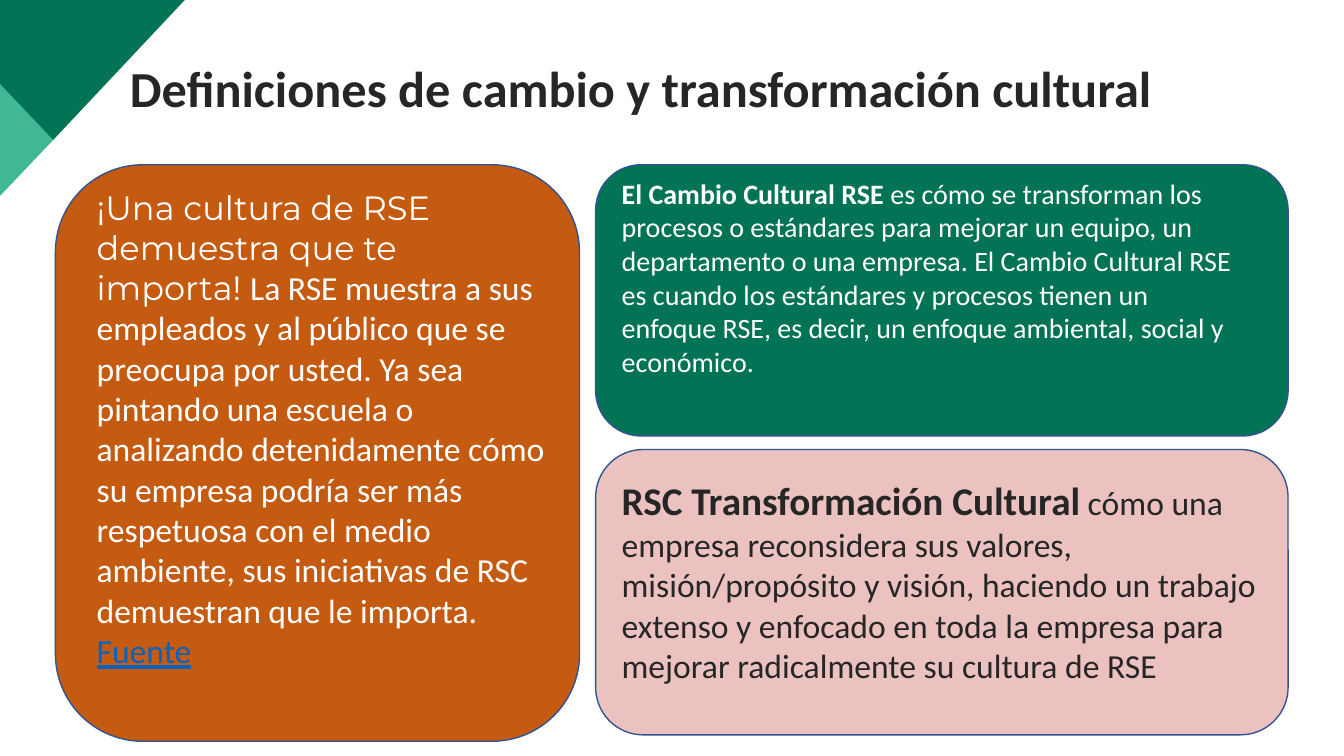
from pptx import Presentation
from pptx.dml.color import RGBColor as Rgb
from pptx.enum.shapes import MSO_SHAPE as Preset
from pptx.enum.text import MSO_ANCHOR as Anchor
from pptx.util import Pt

COLORS = {
    "mint": "40B894",
    "green": "027354",
    "orange": "C55A11",
    "pink": "EBC2BF",
    "outline": "325491",
    "dark": "262626",
    "white": "FFFFFF",
    "link": "0563C1",
}


class SlideBuilder:
    font = "Calibri"
    outline_width = 1

    def __init__(self, slide):
        self.shapes = slide.shapes

    def color(self, name):
        return Rgb.from_string(COLORS[name])

    def paint(self, shape, fill):
        shape.shadow.inherit = False
        shape.fill.solid()
        shape.fill.fore_color.rgb = self.color(fill)

    def corner(self, points, fill):
        outline = self.shapes.build_freeform(*points[0], scale=Pt(1))
        outline.add_line_segments(points[1:], close=True)
        piece = outline.convert_to_shape()
        self.paint(piece, fill)
        piece.line.fill.background()

    def card(self, left, top, width, height, fill):
        panel = self.shapes.add_shape(
            Preset.ROUNDED_RECTANGLE, Pt(left), Pt(top), Pt(width), Pt(height))
        self.paint(panel, fill)
        panel.line.color.rgb = self.color("outline")
        panel.line.width = Pt(self.outline_width)

    def text(self, left, top, width, height, runs, size, color):
        frame = self.shapes.add_textbox(
            Pt(left), Pt(top), Pt(width), Pt(height)).text_frame
        frame.word_wrap = True
        frame.vertical_anchor = Anchor.TOP
        paragraph = frame.paragraphs[0]
        for wording, style in runs:
            run = paragraph.add_run()
            run.text = wording
            run.font.name = style.get("font", self.font)
            run.font.size = Pt(style.get("size", size))
            run.font.bold = style.get("bold", False)
            run.font.underline = style.get("underline", False)
            run.font.color.rgb = self.color(style.get("color", color))
        return paragraph


def main():
    deck = Presentation()
    deck.slide_width, deck.slide_height = Pt(960), Pt(540)
    page = SlideBuilder(deck.slides.add_slide(deck.slide_layouts[6]))

    page.corner([(0, 60), (37.7, 99.5), (0, 139.7)], "mint")
    page.corner([(0, 0), (132, 0), (37.7, 99.5), (0, 60)], "green")

    title = page.text(85.7, 42.5, 834.5, 75, [
        ("Definiciones de cambio y transformación cultural", {"bold": True}),
    ], 36, "dark")
    title.line_spacing = 0.9
    title.space_before = Pt(10)

    cards_top, right_column, right_width = 117.7, 425.5, 494.6
    right_text = right_column + 11.5

    page.card(39.6, cards_top, 374.4, 411.8, "orange")
    page.text(62, 129.6, 335.5, 353.5, [
        ("¡Una cultura de RSE demuestra que te importa! ",
         {"font": "Montserrat"}),
        ("La RSE muestra a sus empleados y al público que se preocupa por "
         "usted. Ya sea pintando una escuela o analizando detenidamente cómo "
         "su empresa podría ser más respetuosa con el medio ambiente, sus "
         "iniciativas de RSC demuestran que le importa. ", {}),
        ("Fuente", {"color": "link", "underline": True}),
    ], 24, "white")

    page.card(right_column, cards_top, right_width, 193.7, "green")
    page.text(right_text, 122.4, 461.5, 167.8, [
        ("El Cambio Cultural RSE ", {"bold": True}),
        ("es cómo se transforman los procesos o estándares para mejorar un "
         "equipo, un departamento o una empresa. El Cambio Cultural RSE es "
         "cuando los estándares y procesos tienen un enfoque RSE, es decir, "
         "un enfoque ambiental, social y económico.", {}),
    ], 20, "white")

    page.card(right_column, 321.1, right_width, 203.8, "pink")
    page.text(right_text, 337, 472.3, 197.3, [
        ("RSC Transformación Cultural", {"size": 28, "bold": True}),
        (" cómo una empresa reconsidera sus valores, misión/propósito y "
         "visión, haciendo un trabajo extenso y enfocado en toda la empresa "
         "para mejorar radicalmente su cultura de RSE", {}),
    ], 24, "dark")

    deck.save("out.pptx")


if __name__ == "__main__":
    main()
